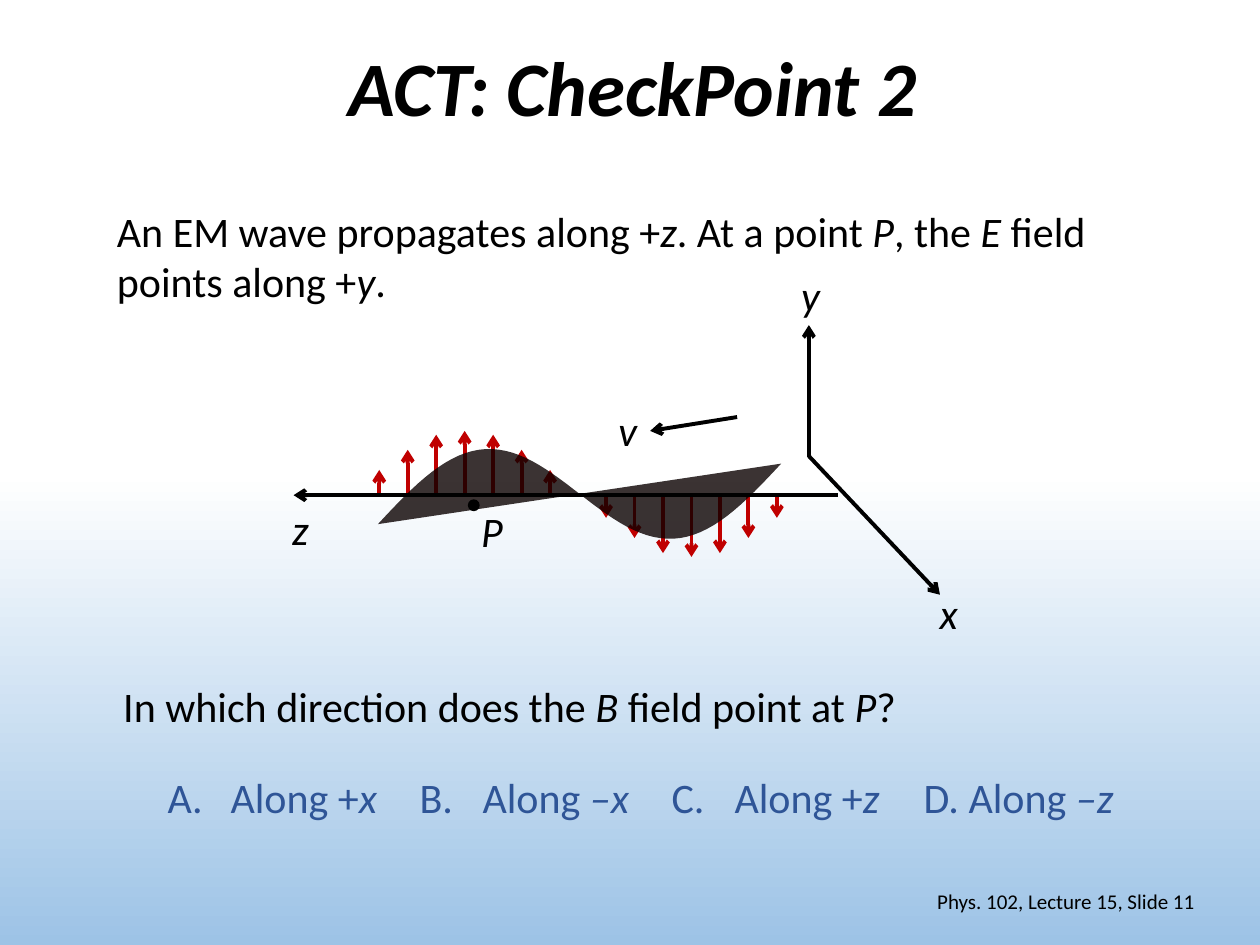
from dataclasses import dataclass
from math import pi, sin
from typing import NamedTuple

from lxml.etree import SubElement
from pptx import Presentation
from pptx.dml.color import RGBColor
from pptx.enum.shapes import MSO_CONNECTOR, MSO_SHAPE
from pptx.enum.text import MSO_ANCHOR, PP_ALIGN
from pptx.oxml.ns import qn
from pptx.util import Inches, Pt

CELL = Inches(0.1)


@dataclass(frozen=True)
class Theme:
    """Colours, font and type sizes of the slide."""
    ink: str = "000000"
    field: str = "C00000"
    sheet: str = "0A0000"
    choice: str = "2F5597"
    sky: tuple = ("FFFFFF", "9DC3E6")
    font: str = "Calibri"
    head: int = 44
    body: int = 24
    note: int = 12
    line: float = 2.25


class Box(NamedTuple):
    """A region in columns and rows of the slide grid."""
    left: float
    top: float
    wide: float
    high: float

    def inner(self, col, row, wide, high):
        """Return a box placed relative to this one."""
        return Box(self.left + col, self.top + row, wide, high)

    def spot(self, col, row):
        """Return a point of this box in slide units."""
        return round((self.left + col) * CELL), round((self.top + row) * CELL)

    def place(self):
        """Return left, top, width and height in slide units."""
        return tuple(round(part * CELL) for part in self)


THEME = Theme()


def tint(hue):
    """Turn a hex string into a colour."""
    return RGBColor.from_string(hue)


def write(shape, text, size, hue=THEME.ink, align=PP_ALIGN.LEFT):
    """Fill a shape with one paragraph, in which stars switch italics."""
    frame = shape.text_frame
    frame.word_wrap = True
    para = frame.paragraphs[0]
    para.alignment = align
    for turn, piece in enumerate(text.split("*")):
        if piece:
            run = para.add_run()
            run.text = piece
            run.font.name = THEME.font
            run.font.size = Pt(size)
            run.font.italic = turn % 2 == 1
            run.font.color.rgb = tint(hue)
    return para


def note(slide, box, text, size=THEME.body, align=PP_ALIGN.LEFT):
    """Add a text box."""
    shape = slide.shapes.add_textbox(*box.place())
    write(shape, text, size, align=align)
    return shape


def arrow(slide, start, end, hue=THEME.ink):
    """Draw an arrow between two points."""
    line = slide.shapes.add_connector(MSO_CONNECTOR.STRAIGHT, *start, *end)
    line.line.color.rgb = tint(hue)
    line.line.width = Pt(THEME.line)
    SubElement(line.line._get_or_add_ln(), qn("a:tailEnd"), type="arrow")
    SubElement(line._element.spPr, qn("a:effectLst"))


def paint(slide):
    """Fill the background with a vertical gradient."""
    fill = slide.background.fill
    fill.gradient()
    fill.gradient_angle = 270
    for stop, hue, place in zip(fill.gradient_stops, THEME.sky, (0.5, 1)):
        stop.color.rgb = tint(hue)
        stop.position = place


def title(slide, box, text):
    """Place the slide title."""
    shape = slide.shapes.title
    shape.left, shape.top, shape.width, shape.height = box.place()
    shape.text_frame.vertical_anchor = MSO_ANCHOR.MIDDLE
    para = write(shape, f"*{text}*", THEME.head, align=PP_ALIGN.CENTER)
    para.line_spacing = 0.9
    para.runs[0].font.bold = True


def choices(slide, box, text, stops):
    """Place the answers in one lettered line with tab stops."""
    shape = slide.placeholders[1]
    shape.left, shape.top, shape.width, shape.height = box.place()
    para = write(shape, text, THEME.body, THEME.choice)
    para.space_before, para.space_after = Pt(0), Pt(6)
    props = para._p.get_or_add_pPr()
    props.set("marL", str(5 * CELL))
    props.set("indent", str(-5 * CELL))
    SubElement(props, qn("a:buFont"), typeface="+mj-lt")
    SubElement(props, qn("a:buAutoNum"), type="alphaUcPeriod")
    tabs = SubElement(props, qn("a:tabLst"))
    for stop in stops:
        SubElement(tabs, qn("a:tab"), pos=str(stop * CELL), algn="l")


def field(slide, box):
    """Draw the two rows of field arrows about the middle of the box."""
    mid = box.high / 2
    rises = (1.9, 3.5, 4.7, 5, 4.7, 3.5, 1.9)
    for first, sign in ((0, -1), (18, 1)):
        for step, rise in enumerate(rises):
            col = first + step * 2.26
            arrow(slide, box.spot(col, mid), box.spot(col, mid + sign * rise), THEME.field)


def sheet(slide, box, swing, count=60):
    """Draw one sine wave about the rising diagonal of the box."""
    def point(share):
        row = box.high * (1 - share) - swing * sin(2 * pi * share)
        return box.spot(box.wide * share, row)

    points = [point(step / count) for step in range(count + 1)]
    pen = slide.shapes.build_freeform(*points[0])
    pen.add_line_segments(points[1:], close=True)
    shape = pen.convert_to_shape()
    shape.shadow.inherit = False
    shape.line.fill.background()
    shape.fill.solid()
    shape.fill.fore_color.rgb = tint(THEME.sheet)
    hue = shape.fill._xPr.find(qn("a:solidFill"))[0]
    SubElement(hue, qn("a:alpha"), val="80000")


def dot(slide, box):
    """Draw the marked point."""
    shape = slide.shapes.add_shape(MSO_SHAPE.OVAL, *box.place())
    shape.shadow.inherit = False
    shape.fill.solid()
    shape.fill.fore_color.rgb = tint(THEME.ink)
    shape.line.color.rgb = tint(THEME.ink)
    shape.line.width = Pt(1)


def wave(slide, box):
    """Draw the axes, the wave and their labels."""
    field(slide, box.inner(8.1, 13.2, 31.6, 10))
    sheet(slide, box.inner(8, 15.8, 32, 4.8), 4.7)
    lines = (
        ((42.2, 15.2), (52.6, 26.2)),
        ((42.2, 15.3), (42.2, 4.8)),
        ((44.5, 18.3), (1.3, 18.3)),
        ((36.5, 12.1), (29.6, 13.2)),
    )
    for start, end in lines:
        arrow(slide, box.spot(*start), box.spot(*end))
    labels = (("z", 0.2, 18.5), ("x", 51.6, 25.1), ("y", 40.6, -0.1),
              ("P", 15.2, 18.6), ("v", 26.1, 10.6))
    for name, col, row in labels:
        note(slide, box.inner(col, row, 4, 5), f"*{name}*")
    dot(slide, box.inner(15.2, 18.7, 0.8, 0.8))


def main():
    """Build and save the slide."""
    deck = Presentation()
    deck.slide_width, deck.slide_height = 100 * CELL, 75 * CELL
    slide = deck.slides.add_slide(deck.slide_layouts[1])
    paint(slide)
    title(slide, Box(7.1, 0, 86.2, 14.5), "ACT: CheckPoint 2")
    note(slide, Box(8.3, 15.8, 86.7, 9.1),
         "An EM wave propagates along +*z*. At a point *P*, the *E* field points along +*y*.")
    wave(slide, Box(22, 21, 56, 31))
    note(slide, Box(8.8, 53.5, 66, 5), "In which direction does the *B* field point at *P*?")
    choices(slide, Box(12.3, 60.7, 80, 5),
            "Along +*x*\tB.\tAlong *–x*\tC.\tAlong +*z*\tD. Along *–z*",
            (20, 25, 40, 45, 60))
    foot = note(slide, Box(69.6, 69.5, 26.2, 4), "Phys. 102, Lecture 15, Slide 11",
                THEME.note, PP_ALIGN.RIGHT)
    foot.text_frame.vertical_anchor = MSO_ANCHOR.MIDDLE
    deck.save("out.pptx")


if __name__ == "__main__":
    main()
